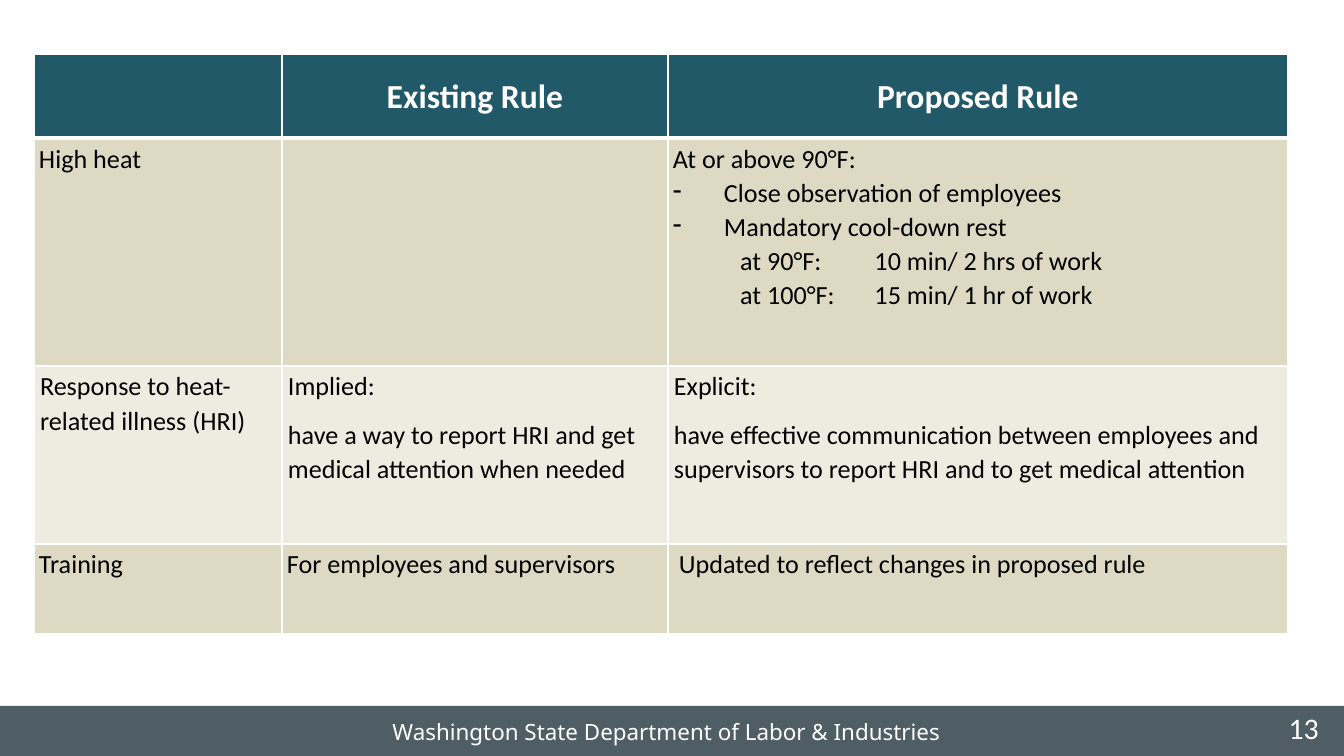
from dataclasses import dataclass

from lxml.etree import SubElement
from pptx import Presentation
from pptx.dml.color import RGBColor
from pptx.enum.shapes import MSO_SHAPE as Shape
from pptx.enum.text import MSO_ANCHOR as Anchor, PP_ALIGN as Align
from pptx.oxml import parse_xml
from pptx.oxml.ns import nsdecls, qn
from pptx.util import Pt

PX = 914400 / 134.4


def px(length):
    return round(length * PX)


@dataclass(frozen=True)
class Theme:
    white: str = "FFFFFF"
    ink: str = "000000"
    header: str = "215968"
    sand: str = "DDD9C3"
    pale: str = "EEECE1"
    band: str = "4F5E64"
    body_font: str = "Calibri"
    footer_font: str = "Noto Sans"
    header_size: int = 18
    body_size: int = 14
    footer_size: int = 12
    number_size: int = 16


@dataclass
class Line:
    text: str
    after: int = 8
    margin: int = 0
    bullet: str = ""
    tabs: tuple = ()


class RuleSlide:
    def __init__(self, deck, theme):
        self.theme = theme
        self.page = deck.slides.add_slide(deck.slide_layouts[6])

    def band(self, left, top, width, height):
        box = self.page.shapes.add_shape(Shape.RECTANGLE, px(left), px(top), px(width), px(height))
        box.shadow.inherit = False
        box.fill.solid()
        box.fill.fore_color.rgb = RGBColor.from_string(self.theme.band)
        box.line.fill.background()

    def span(self, para, text, size, color, font, bold=False):
        span = para.add_run()
        span.text = text
        span.font.size = Pt(size)
        span.font.name = font
        span.font.bold = bold
        span.font.color.rgb = RGBColor.from_string(color)

    def label(self, text, left, top, width, height, size, font, align, spacing=1.0):
        box = self.page.shapes.add_textbox(px(left), px(top), px(width), px(height))
        box.text_frame.word_wrap = True
        para = box.text_frame.paragraphs[0]
        para.alignment = align
        para.line_spacing = spacing
        self.span(para, text, size, self.theme.white, font)

    def paragraph_layout(self, para, line):
        para.line_spacing = 1.07
        para.space_after = Pt(line.after)
        properties = para._p.get_or_add_pPr()
        properties.set("marL", str(px(line.margin)))
        properties.set("indent", str(-px(line.margin) if line.bullet else 0))
        if line.bullet:
            SubElement(properties, qn("a:buChar"), char=line.bullet)
        if line.tabs:
            stops = SubElement(properties, qn("a:tabLst"))
            for stop in line.tabs:
                SubElement(stops, qn("a:tab"), pos=str(px(stop)), algn="l")

    def borders(self, cell, top, bottom):
        properties = cell._tc.get_or_add_tcPr()
        widths = {"lnL": 1, "lnR": 1, "lnT": top, "lnB": bottom}
        for place, (side, width) in enumerate(widths.items()):
            properties.insert(place, parse_xml(
                f'<a:{side} {nsdecls("a")} w="{Pt(width)}"><a:solidFill>'
                f'<a:srgbClr val="{self.theme.white}"/></a:solidFill></a:{side}>'))

    def cell(self, cell, lines, row):
        theme = self.theme
        heading = row == 0
        fill = theme.header if heading else (theme.pale, theme.sand)[row % 2]
        cell.fill.solid()
        cell.fill.fore_color.rgb = RGBColor.from_string(fill)
        cell.margin_left = cell.margin_right = px(6 if row == 2 else 5)
        cell.margin_top = cell.margin_bottom = px(3)
        cell.vertical_anchor = Anchor.MIDDLE if heading else Anchor.TOP
        self.borders(cell, 3 if row == 1 else 1, 3 if heading else 1)
        frame = cell.text_frame
        for index, line in enumerate(lines):
            para = frame.add_paragraph() if index else frame.paragraphs[0]
            para.alignment = Align.CENTER if heading else Align.LEFT
            self.paragraph_layout(para, line)
            self.span(para, line.text,
                      theme.header_size if heading else theme.body_size,
                      theme.white if heading else theme.ink, theme.body_font, heading)

    def table(self, left, top, widths, heights, rows):
        grid = self.page.shapes.add_table(
            len(heights), len(widths), px(left), px(top), px(sum(widths)), px(sum(heights))).table
        grid.horz_banding = False
        for column, width in zip(grid.columns, widths):
            column.width = px(width)
        for row, height in zip(grid.rows, heights):
            row.height = px(height)
        for row, contents in enumerate(rows):
            for column, lines in enumerate(contents):
                self.cell(grid.cell(row, column), lines, row)


def main():
    theme = Theme()
    deck = Presentation()
    deck.slide_width, deck.slide_height = px(1344), px(756)
    slide = RuleSlide(deck, theme)

    slide.band(0, 706, 1344, 50)
    slide.label("Washington State Department of Labor & Industries",
                67, 703, 1199, 46, theme.footer_size, theme.footer_font, Align.CENTER, 1.3)
    slide.label("13", 1254, 703, 78, 50, theme.number_size, theme.body_font, Align.RIGHT)

    rest_tabs = (83, 201)
    rows = [
        [[], [Line("Existing Rule")], [Line("Proposed Rule")]],
        [[Line("High heat")], [], [
            Line("At or above 90°F:", after=0),
            Line("Close observation of employees", after=0, margin=51, bullet="-"),
            Line("Mandatory cool-down rest", after=0, margin=51, bullet="-"),
            Line("\tat 90°F:\t10 min/ 2 hrs of work", after=0, tabs=rest_tabs),
            Line("\tat 100°F:\t15 min/ 1 hr of work", after=0, tabs=rest_tabs),
        ]],
        [[Line("Response to heat-related illness (HRI)")],
         [Line("Implied:"),
          Line("have a way to report HRI and get medical attention when needed")],
         [Line("Explicit:"),
          Line("have effective communication between employees and supervisors "
               "to report HRI and to get medical attention")]],
        [[Line("Training")],
         [Line("For employees and supervisors", after=0)],
         [Line("Updated to reflect changes in proposed rule", after=0, margin=6)]],
    ]
    slide.table(34, 54, (248, 386, 620), (84, 228, 178, 90), rows)
    deck.save("out.pptx")


if __name__ == "__main__":
    main()
